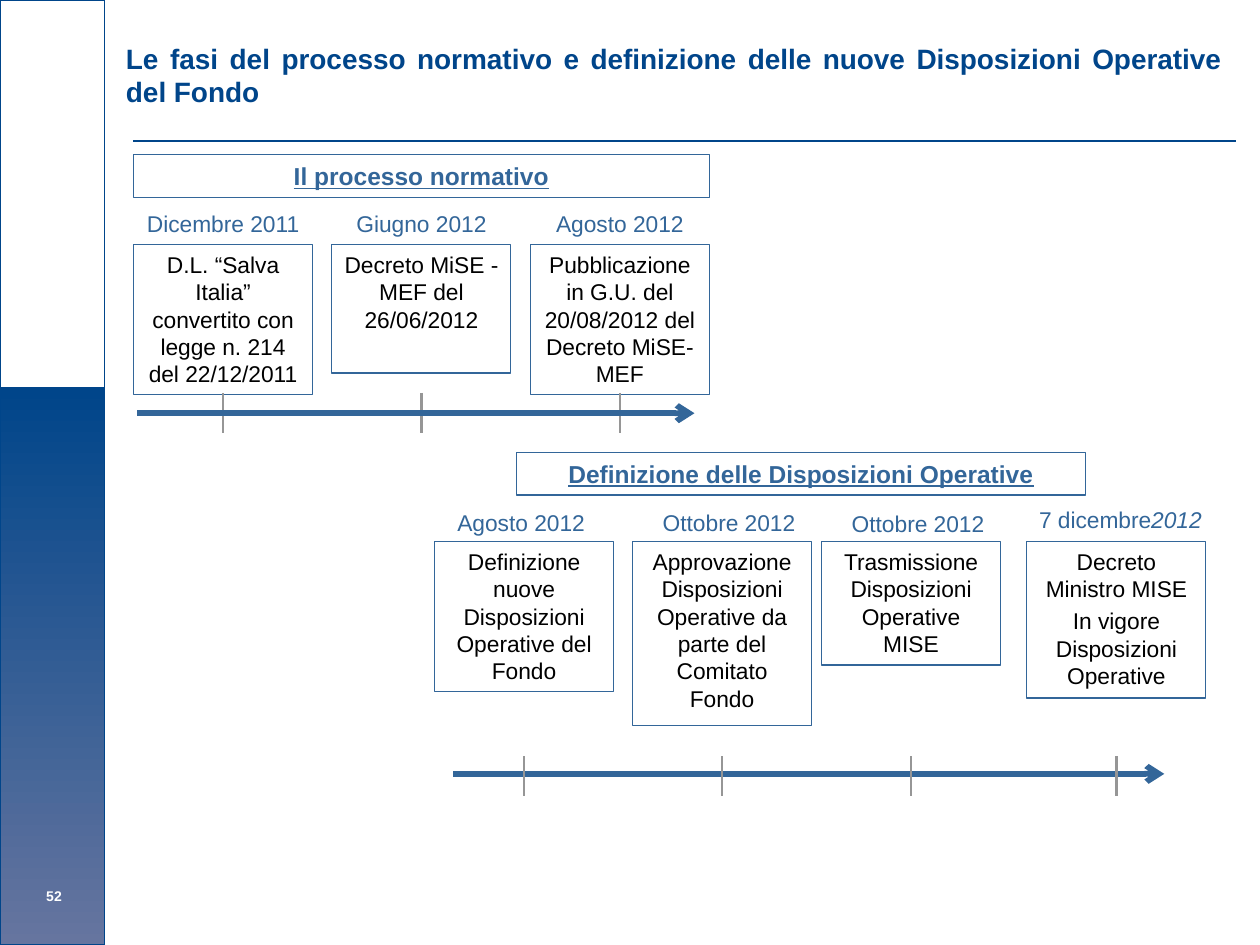
from lxml import etree
from pptx import Presentation
from pptx.dml.color import RGBColor as Rgb
from pptx.enum.shapes import MSO_CONNECTOR as Link, MSO_SHAPE as Preset
from pptx.enum.text import MSO_ANCHOR as Anchor, PP_ALIGN as Align
from pptx.oxml.ns import qn
from pptx.util import Cm, Pt

COLOURS = {
    "navy": "00458A",
    "slate": "66759F",
    "blue": "336699",
    "grey": "969696",
    "black": "000000",
    "white": "FFFFFF",
}


def colour(name):
    return Rgb.from_string(COLOURS[name])


class Painter:
    """Holds the style and the slide being drawn."""

    font = "Arial"
    body_size = 13
    box_width = 3.61

    def __init__(self, slide):
        self.slide = slide

    def fill_text(self, shape, paragraphs, size=body_size, ink="black",
                  bold=False, underline=False, align=Align.CENTER, anchor=Anchor.TOP):
        """Each paragraph is a list of (text, italic) runs."""
        frame = shape.text_frame
        frame.word_wrap = True
        frame.vertical_anchor = anchor
        for index, runs in enumerate(paragraphs):
            para = frame.add_paragraph() if index else frame.paragraphs[0]
            para.alignment = align
            if index:
                para.space_before = Pt(size * 0.2)
            for text, italic in runs:
                span = para.add_run()
                span.text = text
                font = span.font
                font.name, font.size = self.font, Pt(size)
                font.bold, font.italic, font.underline = bold, italic, underline
                font.color.rgb = colour(ink)

    def text(self, left, top, width, height, paragraphs, **style):
        box = self.slide.shapes.add_textbox(Cm(left), Cm(top), Cm(width), Cm(height))
        self.fill_text(box, paragraphs, **style)

    def box(self, left, top, width, height, paragraphs=(), edge="blue", **style):
        box = self.slide.shapes.add_shape(
            Preset.RECTANGLE, Cm(left), Cm(top), Cm(width), Cm(height))
        box.shadow.inherit = False
        box.fill.background()
        box.line.color.rgb = colour(edge)
        box.line.width = Pt(0.75)
        self.fill_text(box, paragraphs, **style)
        return box

    def line(self, x1, y1, x2, y2, ink, width, arrow=False):
        line = self.slide.shapes.add_connector(
            Link.STRAIGHT, Cm(x1), Cm(y1), Cm(x2), Cm(y2))
        line.line.color.rgb = colour(ink)
        line.line.width = Pt(width)
        properties = line.element.spPr
        if arrow:
            etree.SubElement(properties.find(qn("a:ln")), qn("a:tailEnd"), type="arrow")
        etree.SubElement(properties, qn("a:effectLst"))

    def heading(self, left, top, width, text):
        self.box(left, top, width, 0.86, [[(text, False)]],
                 size=14, ink="blue", bold=True, underline=True)

    def step(self, left, top, height, paragraphs):
        self.box(left, top, self.box_width, height,
                 [[(text, False)] for text in paragraphs])

    def label(self, left, top, width, runs):
        self.text(left, top, width, 0.81, [runs], ink="blue")

    def tick(self, box_left, top):
        middle = box_left + self.box_width / 2
        self.line(middle, top, middle, top + 0.81, "grey", 1.5)


def main():
    deck = Presentation()
    deck.slide_width, deck.slide_height = Cm(25.4), Cm(19.05)
    painter = Painter(deck.slides.add_slide(deck.slide_layouts[6]))

    # Side band, title rule and page number
    painter.line(2.69, 2.84, 24.92, 2.84, "navy", 1.5)
    band = painter.box(0, 7.82, 2.11, 11.23, edge="navy")
    band.fill.gradient()
    band.fill.gradient_angle = 270
    for stop, name in zip(band.fill.gradient_stops, ("navy", "slate")):
        stop.color.rgb = colour(name)
    painter.box(0, 0, 2.11, 7.92, edge="navy")
    painter.text(0, 17.09, 2.18, 1.27, [[("52", False)]],
                 size=8, ink="white", bold=True, anchor=Anchor.BOTTOM)

    # Title
    title = ("Le fasi del processo normativo e definizione delle nuove "
             "Disposizioni Operative del Fondo")
    painter.text(2.29, 0.71, 22.6, 1.88, [[(title, False)]],
                 size=16, ink="navy", bold=True, align=Align.JUSTIFY)

    # Legislative process
    painter.heading(2.69, 3.12, 11.61, "Il processo normativo")
    law_steps = [
        ("Dicembre 2011", 3.02,
         "D.L. “Salva Italia” convertito con legge n. 214 del 22/12/2011"),
        ("Giugno 2012", 2.59, "Decreto MiSE - MEF del 26/06/2012"),
        ("Agosto 2012", 3.02,
         "Pubblicazione in G.U. del 20/08/2012 del Decreto MiSE-MEF"),
    ]
    for index, (date, height, text) in enumerate(law_steps):
        left = 2.69 + 4 * index
        painter.step(left, 4.93, height, [text])
        painter.label(left, 4.11, painter.box_width, [(date, False)])
        painter.tick(left, 7.92)
    painter.line(2.77, 8.33, 14, 8.33, "blue", 3.25, arrow=True)

    # Operating rules
    painter.line(9.14, 15.6, 23.47, 15.6, "blue", 3.25, arrow=True)
    painter.heading(10.41, 9.12, 11.48, "Definizione delle Disposizioni Operative")
    # box left, box height, label left, label top, date runs, paragraphs
    rule_steps = [
        (8.76, 3.02, 8.31, 10.13, [("Agosto 2012", False)],
         ["Definizione nuove Disposizioni Operative del Fondo"]),
        (12.75, 3.71, 12.5, 10.13, [("Ottobre 2012", False)],
         ["Approvazione Disposizioni Operative da parte del Comitato Fondo"]),
        (16.56, 2.49, 16.31, 10.16, [("Ottobre 2012", False)],
         ["Trasmissione Disposizioni Operative MISE"]),
        (20.7, 3.15, 20.39, 10.08, [("7 dicembre", False), ("2012", True)],
         ["Decreto Ministro MISE", "In vigore Disposizioni Operative"]),
    ]
    for left, height, label_left, label_top, date, paragraphs in rule_steps:
        painter.step(left, 10.92, height, paragraphs)
        painter.label(label_left, label_top, 4.39, date)
        painter.tick(left, 15.24)

    deck.save("out.pptx")


if __name__ == "__main__":
    main()
